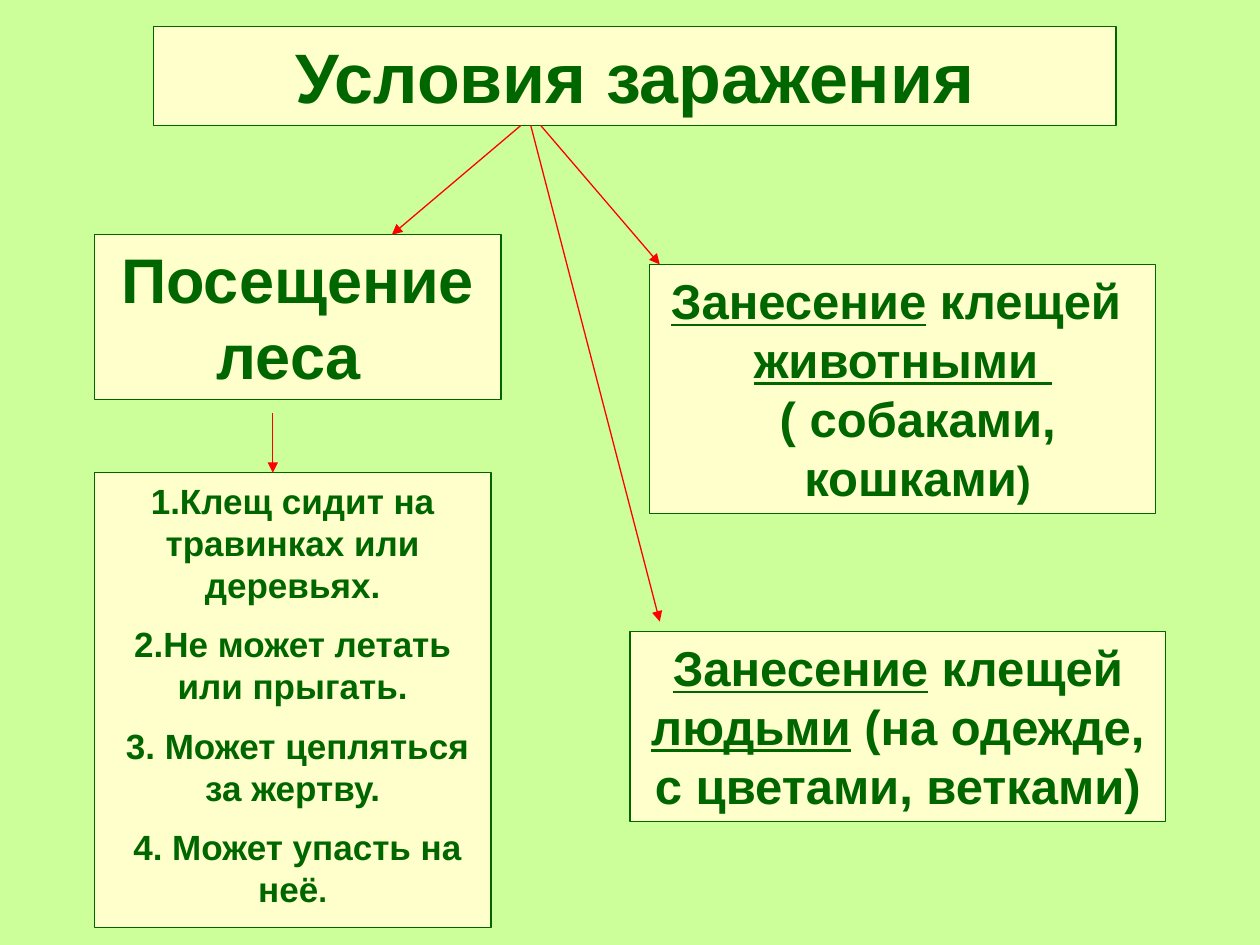
"""Build the slide on the conditions of tick infection."""
import pptx
import pptx.dml.color
import pptx.enum.shapes
import pptx.enum.text
import pptx.oxml.ns
import pptx.util
from lxml import etree
from pptx.util import Cm

GREEN = pptx.dml.color.RGBColor(0x00, 0x66, 0x00)
CREAM = pptx.dml.color.RGBColor(0xFF, 0xFF, 0xCC)
LIME = pptx.dml.color.RGBColor(0xCC, 0xFF, 0x99)
RED = pptx.dml.color.RGBColor(0xFF, 0x00, 0x00)


def write_panel(panel, paragraphs, size, gap=0, indents=(),
                anchor=pptx.enum.text.MSO_ANCHOR.TOP):
    panel.fill.solid()
    panel.fill.fore_color.rgb = CREAM
    panel.line.color.rgb = GREEN
    panel.line.width = pptx.util.Pt(0.75)
    frame = panel.text_frame
    frame.word_wrap = True
    frame.auto_size = pptx.enum.text.MSO_AUTO_SIZE.NONE
    frame.vertical_anchor = anchor
    for index, pieces in enumerate(paragraphs):
        paragraph = frame.paragraphs[0] if index == 0 else frame.add_paragraph()
        properties = paragraph._p.get_or_add_pPr()
        properties.set("marL", str(indents[index] if indents else 0))
        properties.set("indent", "0")
        etree.SubElement(properties, pptx.oxml.ns.qn("a:buNone"))
        paragraph.alignment = pptx.enum.text.PP_ALIGN.CENTER
        paragraph.space_before = pptx.util.Pt(gap if index else 0)
        for text, style in pieces:
            run = paragraph.add_run()
            run.text = text
            run.font.name = "Arial"
            run.font.size = pptx.util.Pt(style.get("size", size))
            run.font.bold = True
            run.font.underline = style.get("underline", False)
            run.font.color.rgb = GREEN


presentation = pptx.Presentation()
presentation.slide_width = Cm(25.4)
presentation.slide_height = Cm(19.05)
slide = presentation.slides.add_slide(presentation.slide_layouts[1])
slide.background.fill.solid()
slide.background.fill.fore_color.rgb = LIME

heading = slide.shapes.title
heading.left, heading.top, heading.width, heading.height = Cm(3.1), Cm(0.53), Cm(19.4), Cm(2)
write_panel(heading, [[("Условия заражения", {})]], 40,
            anchor=pptx.enum.text.MSO_ANCHOR.MIDDLE)

tick_habits = slide.placeholders[1]
tick_habits.left, tick_habits.top = Cm(1.9), Cm(9.53)
tick_habits.width, tick_habits.height = Cm(8), Cm(9.17)
write_panel(tick_habits, [
    [("1.Клещ сидит на травинках или деревьях.", {})],
    [("2.Не может летать или прыгать.", {})],
    [(" 3. Может цепляться за жертву.", {})],
    [(" 4. Может упасть на неё", {}), (".", {"size": 18})],
], 20, gap=10)

underlined = {"underline": True}
causes = [
    (1.9, 4.73, 8.2, 3.33, 36, (), [[("Посещение леса ", {})]]),
    (13.1, 5.33, 10.2, 5.03, 28, (0, 0, Cm(0.6)), [
        [("Занесение", underlined), (" клещей ", {})],
        [("животными ", underlined)],
        [("( собаками, кошками", {}), (")", {"size": 24})],
    ]),
    (12.7, 12.73, 10.8, 3.83, 28, (), [[
        ("Занесение", underlined), (" клещей ", {}), ("людьми", underlined),
        (" (на одежде, с цветами, ветками)", {}),
    ]]),
]
for left, top, width, height, size, indents, paragraphs in causes:
    cause = slide.shapes.add_textbox(Cm(left), Cm(top), Cm(width), Cm(height))
    write_panel(cause, paragraphs, size, indents=indents)

arrows = [
    (10.5, 2.53, 7.9, 4.73),
    (10.7, 2.53, 13.3, 12.53),
    (10.9, 2.53, 13.3, 5.33),
    (5.5, 8.33, 5.5, 9.53),
]
for ends in arrows:
    arrow = slide.shapes.add_connector(
        pptx.enum.shapes.MSO_CONNECTOR.STRAIGHT, *map(Cm, ends))
    arrow.line.color.rgb = RED
    arrow.line.width = pptx.util.Pt(0.75)
    etree.SubElement(arrow.line._get_or_add_ln(), pptx.oxml.ns.qn("a:tailEnd"), type="triangle")
    etree.SubElement(arrow._element.spPr, pptx.oxml.ns.qn("a:effectLst"))

presentation.save("out.pptx")
